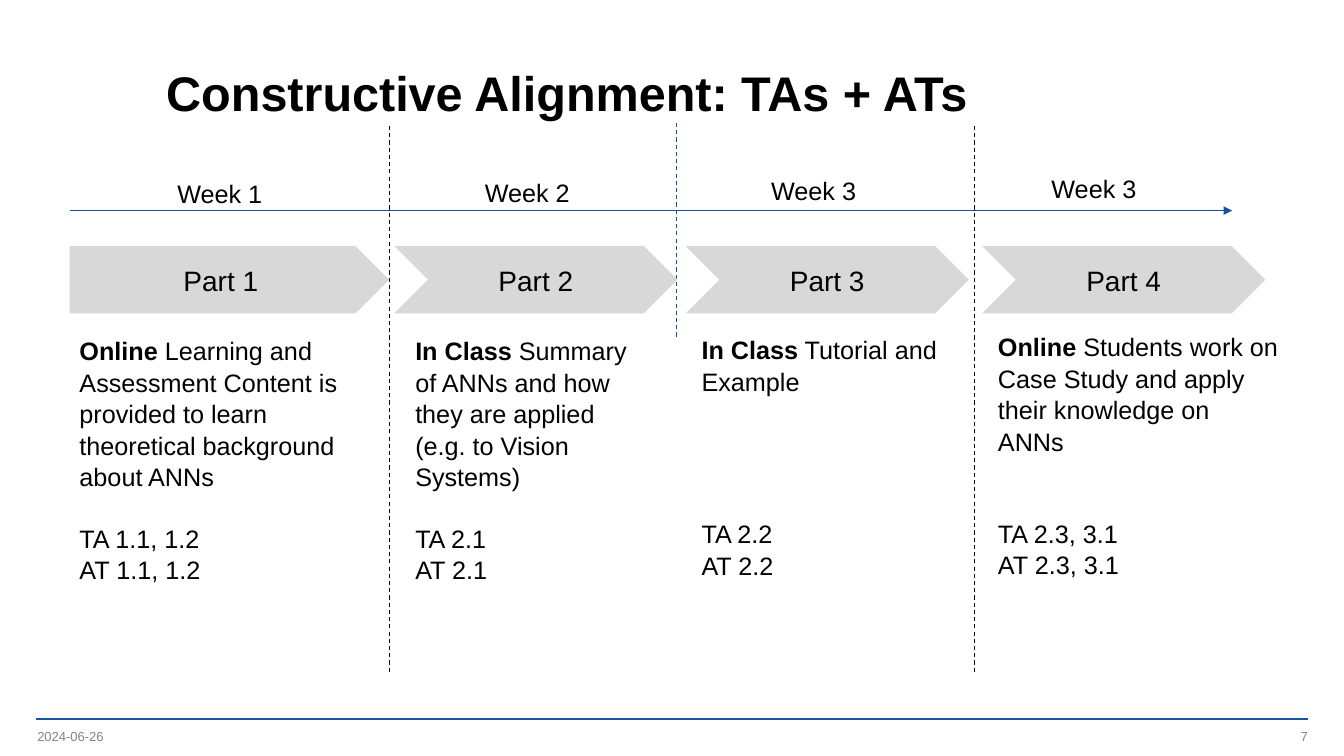
from lxml.etree import SubElement
from pptx import Presentation
from pptx.dml.color import RGBColor
from pptx.enum.dml import MSO_LINE
from pptx.enum.shapes import MSO_CONNECTOR, MSO_SHAPE
from pptx.enum.text import MSO_ANCHOR as Anchor, PP_ALIGN as Align
from pptx.oxml.ns import qn
from pptx.util import Inches, Pt

TITLE = "Constructive Alignment: TAs + ATs"
DATE, PAGE_NUMBER = "2024-06-26", "7"

# Lengths in inches; "gap" counts text lines between description and codes.
PARTS = [
    dict(week="Week 1", week_at=(1.66, 1.71), name="Part 1", left=0.69, width=3.17,
         shape=MSO_SHAPE.PENTAGON, text_at=(0.69, 3.27), text_width=3, gap=1,
         mode="Online", codes="1.1, 1.2",
         text=" Learning and Assessment Content is provided to learn "
              "theoretical background about ANNs"),
    dict(week="Week 2", week_at=(4.71, 1.70), name="Part 2", left=3.91, width=2.81,
         shape=MSO_SHAPE.CHEVRON, text_at=(4.02, 3.27), text_width=2.48, gap=1,
         mode="In Class", codes="2.1",
         text=" Summary of ANNs and how they are applied (e.g. to Vision Systems)"),
    dict(week="Week 3", week_at=(7.55, 1.68), name="Part 3", left=6.8, width=2.81,
         shape=MSO_SHAPE.CHEVRON, text_at=(6.86, 3.26), text_width=3, gap=4,
         mode="In Class", codes="2.2", text=" Tutorial and Example"),
    dict(week="Week 3", week_at=(10.33, 1.66), name="Part 4", left=9.74, width=2.81,
         shape=MSO_SHAPE.CHEVRON, text_at=(9.8, 3.23), text_width=3, gap=2,
         mode="Online", codes="2.3, 3.1",
         text=" Students work on Case Study and apply their knowledge on ANNs"),
]
BLACK, GREY, SILVER = "000000", "848489", "D8D8D8"
BLUE, RULE_BLUE = "1451A5", "1954A6"
DIVIDERS = [(3.86, 1.25, 6.67, BLACK), (6.71, 1.22, 3.36, BLUE), (9.67, 1.25, 6.67, BLACK)]
ARROW_TOP, ARROW_HEIGHT, TIMELINE_Y = 2.44, 0.67, 2.09
LINE_PITCH, LINE_SPACING = 21.6, 1.04

deck = Presentation()
deck.slide_width, deck.slide_height = Inches(13.33), Inches(7.5)
page = deck.slides.add_slide(deck.slide_layouts[6])


def color(code):
    return RGBColor.from_string(code)


def style(para, size, ink=BLACK, align=Align.LEFT, spacing=None):
    para.alignment = align
    para.line_spacing = spacing
    para.font.name = "Arial"
    para.font.size = Pt(size)
    para.font.color.rgb = color(ink)


def add_box(left, top, width, height, anchor=Anchor.TOP, inset=True):
    """Add an empty wrapping text box and return its text frame."""
    box = page.shapes.add_textbox(*map(Inches, (left, top, width, height)))
    frame = box.text_frame
    frame.word_wrap = True
    frame.vertical_anchor = anchor
    if not inset:
        frame.margin_left = frame.margin_right = frame.margin_top = frame.margin_bottom = 0
    return frame


def add_line(start, end, ink, weight=0.75):
    line = page.shapes.add_connector(MSO_CONNECTOR.STRAIGHT, *map(Inches, (*start, *end)))
    line.line.color.rgb = color(ink)
    line.line.width = Pt(weight)
    SubElement(line._element.spPr, qn("a:effectLst"))
    return line


def add_part(part):
    """Draw one column: week label, arrow block and description."""
    week = add_box(*part["week_at"], 1.05, 0.4).paragraphs[0]
    week.text = part["week"]
    style(week, 18, spacing=LINE_SPACING)

    arrow = page.shapes.add_shape(part["shape"], *map(
        Inches, (part["left"], ARROW_TOP, part["width"], ARROW_HEIGHT)))
    arrow.shadow.inherit = False
    arrow.fill.solid()
    arrow.fill.fore_color.rgb = color(SILVER)
    arrow.line.fill.background()
    arrow.text_frame.vertical_anchor = Anchor.MIDDLE
    label = arrow.text_frame.paragraphs[0]
    label.text = part["name"]
    style(label, 20, align=Align.CENTER, spacing=LINE_SPACING)

    frame = add_box(*part["text_at"], part["text_width"], 2.52)
    description = frame.paragraphs[0]
    mode = description.add_run()
    mode.text = part["mode"]
    mode.font.bold = True
    description.add_run().text = part["text"]
    activity, assessment = frame.add_paragraph(), frame.add_paragraph()
    activity.text = "TA " + part["codes"]
    assessment.text = "AT " + part["codes"]
    activity.space_before = Pt(part["gap"] * LINE_PITCH)
    for para in frame.paragraphs:
        style(para, 18, spacing=LINE_SPACING)


add_line((0.36, 7.13), (12.97, 7.13), RULE_BLUE, 1.5)
title = add_box(1.55, 0.37, 11.01, 0.98, Anchor.MIDDLE).paragraphs[0]
title.text = TITLE
style(title, 34.7, spacing=1.18)
title.font.bold = True

for text, left, align in [(DATE, 0.37, Align.LEFT), (PAGE_NUMBER, 9.97, Align.RIGHT)]:
    footer = add_box(left, 7.22, 3, 0.17, Anchor.MIDDLE, inset=False).paragraphs[0]
    footer.text = text
    style(footer, 9.3, GREY, align)

timeline = add_line((0.69, TIMELINE_Y), (12.22, TIMELINE_Y), BLUE)
SubElement(timeline.line._get_or_add_ln(), qn("a:tailEnd"), type="triangle")
for x, top, bottom, ink in DIVIDERS:
    add_line((x, top), (x, bottom), ink).line.dash_style = MSO_LINE.DASH
for part in PARTS:
    add_part(part)

deck.save("out.pptx")
